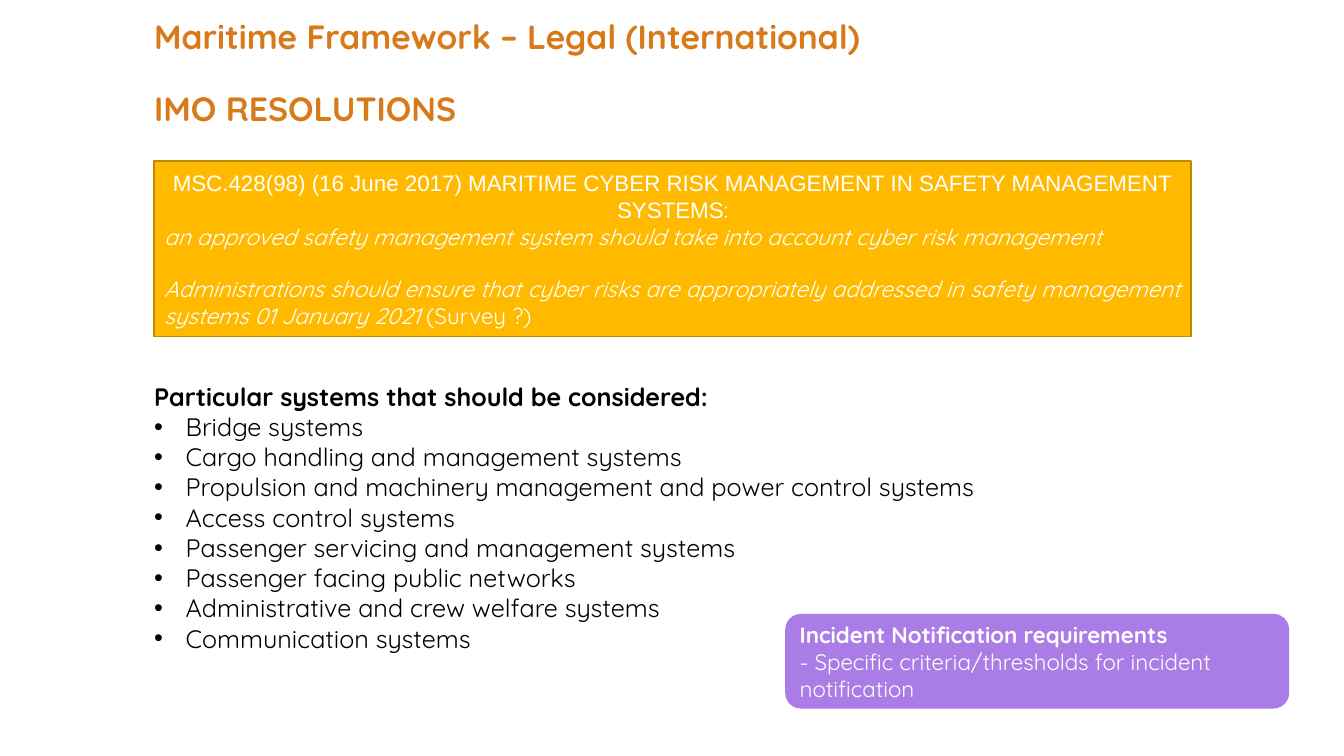
from lxml import etree
from pptx import Presentation
from pptx.dml.color import RGBColor
from pptx.enum import shapes, text
from pptx.oxml.ns import qn
from pptx.util import Pt

COLORS = {
    "black": "000000",
    "white": "FFFFFF",
    "orange": "D87A1A",
    "amber": "FFBA00",
    "amber_edge": "BD8A00",
    "purple": "AA7DE6",
}
SYSTEMS = [
    "Bridge systems",
    "Cargo handling and management systems",
    "Propulsion and machinery management and power control systems",
    "Access control systems",
    "Passenger servicing and management systems",
    "Passenger facing public networks",
    "Administrative and crew welfare systems",
    "Communication systems",
]


def color(name):
    return RGBColor.from_string(COLORS[name])


def add_span(para, words, size=16, ink="white", face="Quicksand", bold=False, italic=False):
    span = para.add_run()
    span.text = words
    font = span.font
    font.name, font.size, font.bold, font.italic = face, Pt(size), bold, italic
    font.color.rgb = color(ink)


def add_bullet(para, indent):
    properties = para._p.get_or_add_pPr()
    properties.set("marL", str(Pt(indent)))
    properties.set("indent", str(Pt(-indent)))
    etree.SubElement(properties, qn("a:buFont")).set("typeface", "Arial")
    etree.SubElement(properties, qn("a:buChar")).set("char", "•")


class SlideBuilder:
    def __init__(self, page):
        self.page = page

    def text_box(self, left, top, width, height):
        box = self.page.shapes.add_textbox(Pt(left), Pt(top), Pt(width), Pt(height))
        box.text_frame.word_wrap = True
        return box.text_frame

    def panel(self, kind, left, top, width, height, fill, edge=None):
        shape = self.page.shapes.add_shape(kind, Pt(left), Pt(top), Pt(width), Pt(height))
        shape.shadow.inherit = False
        shape.fill.solid()
        shape.fill.fore_color.rgb = color(fill)
        if edge:
            shape.line.color.rgb = color(edge)
            shape.line.width = Pt(1.25)
        else:
            shape.line.fill.background()
        frame = shape.text_frame
        frame.word_wrap = True
        frame.vertical_anchor = text.MSO_ANCHOR.MIDDLE
        return frame

    def paragraph(self, frame, *spans, align=text.PP_ALIGN.LEFT, before=None,
                  spacing=None, bullet=None, **style):
        para = frame.paragraphs[0]
        if para.runs:
            para = frame.add_paragraph()
        para.alignment = align
        if spacing:
            para.line_spacing = spacing
        if before:
            para.space_before = Pt(before)
        if bullet:
            add_bullet(para, bullet)
        for words, changes in spans:
            add_span(para, words, **{**style, **changes})


def main():
    deck = Presentation()
    deck.slide_width, deck.slide_height = Pt(960), Pt(540)
    builder = SlideBuilder(deck.slides.add_slide(deck.slide_layouts[6]))

    systems = builder.text_box(103, 268.6, 730.8, 203.8)
    builder.paragraph(systems, ("Particular systems that should be considered:", {}),
                      size=18, ink="black", bold=True)
    for system in SYSTEMS:
        builder.paragraph(systems, (system, {}), size=18, ink="black", bullet=22.5)

    title = builder.text_box(103, 10.8, 769.7, 31.7)
    heading = {"size": 24, "ink": "orange", "bold": True, "spacing": 0.9}
    builder.paragraph(title, ("Maritime Framework – Legal (International)", {}), **heading)
    builder.paragraph(title, ("IMO RESOLUTIONS", {}), before=25.9, **heading)

    resolution = builder.panel(shapes.MSO_SHAPE.RECTANGLE, 110.2, 115.2, 740.4, 125.3,
                               "amber", edge="amber_edge")
    builder.paragraph(
        resolution,
        ("MSC.428(98) (16 June 2017) MARITIME CYBER RISK MANAGEMENT IN SAFETY "
         "MANAGEMENT SYSTEMS", {"face": "Arial"}),
        (":", {}), align=text.PP_ALIGN.CENTER)
    builder.paragraph(
        resolution,
        ("an approved safety management system should take into account cyber risk "
         "management", {}), align=text.PP_ALIGN.JUSTIFY, italic=True)
    builder.paragraph(
        resolution,
        ("Administrations should ensure that cyber risks are appropriately addressed in "
         "safety management systems 01 January 2021 ", {"italic": True}),
        ("(Survey ?)", {}), align=text.PP_ALIGN.JUSTIFY, before=18.4)

    incident = builder.panel(shapes.MSO_SHAPE.ROUNDED_RECTANGLE, 560.9, 438.5, 360, 67.7,
                             "purple")
    builder.paragraph(incident, ("Incident Notification requirements", {}), bold=True)
    builder.paragraph(incident,
                      ("- Specific criteria/thresholds for incident notification", {}))

    deck.save("out.pptx")


if __name__ == "__main__":
    main()
